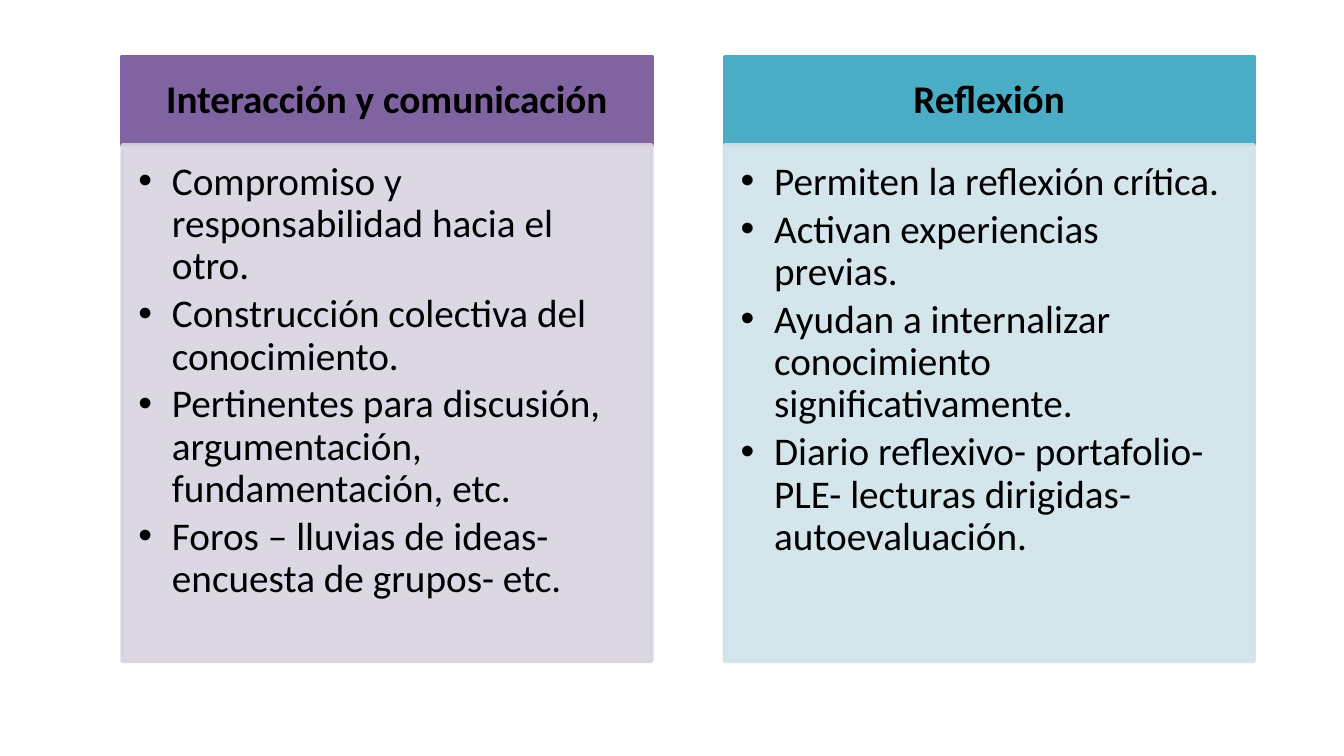
"""Build a slide with two columns of traits, each with a header and a bulleted panel."""
from lxml.etree import SubElement
from pptx import Presentation
from pptx.dml.color import RGBColor
from pptx.enum.shapes import MSO_SHAPE
from pptx.enum.text import MSO_ANCHOR, PP_ALIGN
from pptx.oxml.ns import qn
from pptx.util import Inches, Pt

BLACK = RGBColor(0x00, 0x00, 0x00)
PURPLE = RGBColor(0x80, 0x64, 0xA2)
LILAC = RGBColor(0xD8, 0xD3, 0xE0)
TEAL = RGBColor(0x4B, 0xAC, 0xC6)
PALE_BLUE = RGBColor(0xD0, 0xE3, 0xEA)

LEFT, TOP, WIDTH, COLUMN_STEP = 0.91, 0.42, 3.94, 4.48
HEADER_HEIGHT, PANEL_HEIGHT = 0.66, 3.84

HEADER_FRAME = {
    "margin_left": Inches(0.16), "margin_top": Inches(0.09),
    "margin_right": Inches(0.16), "margin_bottom": Inches(0.09),
    "vertical_anchor": MSO_ANCHOR.MIDDLE, "word_wrap": True,
}
PANEL_FRAME = {
    "margin_left": Inches(0.12), "margin_top": Inches(0.12),
    "margin_right": Inches(0.2), "margin_bottom": Inches(0.18),
    "vertical_anchor": MSO_ANCHOR.TOP, "word_wrap": True,
}
HEADER_PARAGRAPH = {"alignment": PP_ALIGN.CENTER, "line_spacing": 0.9, "space_after": Pt(7)}
PANEL_PARAGRAPH = {
    "alignment": PP_ALIGN.LEFT, "level": 1, "line_spacing": 0.9, "space_after": Pt(3),
}
FONT = {"name": "Calibri", "size": Pt(21)}

COLUMNS = [
    ("Interacción y comunicación", PURPLE, LILAC, [
        "Compromiso y responsabilidad hacia el otro.",
        "Construcción colectiva del conocimiento.",
        "Pertinentes para discusión, argumentación, fundamentación, etc.",
        "Foros – lluvias de ideas- encuesta de grupos- etc.",
    ]),
    ("Reflexión", TEAL, PALE_BLUE, [
        "Permiten la reflexión crítica.",
        "Activan experiencias previas.",
        "Ayudan a internalizar conocimiento significativamente.",
        "Diario reflexivo- portafolio- PLE- lecturas dirigidas- autoevaluación.",
    ]),
]


def set_attributes(target, values):
    for name, value in values.items():
        setattr(target, name, value)


def add_box(left, top, height, color, lines, frame_format, paragraph_format, bold):
    shape = slide.shapes.add_shape(
        MSO_SHAPE.RECTANGLE, Inches(left), Inches(top), Inches(WIDTH), Inches(height))
    shape.shadow.inherit = False
    shape.fill.solid()
    shape.fill.fore_color.rgb = color
    shape.line.color.rgb = color
    shape.line.width = Pt(2)
    set_attributes(shape.text_frame, frame_format)
    shape.text_frame.text = "\n".join(lines)
    for paragraph in shape.text_frame.paragraphs:
        set_attributes(paragraph, paragraph_format)
        set_attributes(paragraph.runs[0].font, {**FONT, "bold": bold})
        paragraph.runs[0].font.color.rgb = BLACK
    return shape


presentation = Presentation()
presentation.slide_width = Inches(10)
presentation.slide_height = Inches(10 * 9 / 16)
slide = presentation.slides.add_slide(presentation.slide_layouts[6])

for index, (title, header_color, panel_color, bullets) in enumerate(COLUMNS):
    left = LEFT + index * COLUMN_STEP
    add_box(left, TOP, HEADER_HEIGHT, header_color, [title],
            HEADER_FRAME, HEADER_PARAGRAPH, True)
    panel = add_box(left, TOP + HEADER_HEIGHT, PANEL_HEIGHT, panel_color, bullets,
                    PANEL_FRAME, PANEL_PARAGRAPH, False)
    for color in panel._element.spPr.iter(qn("a:srgbClr")):
        SubElement(color, qn("a:alpha"), val="90000")
    for paragraph in panel.text_frame.paragraphs:
        properties = paragraph._p.get_or_add_pPr()
        properties.set("marL", str(Inches(0.25)))
        properties.set("indent", str(Inches(-0.25)))
        SubElement(properties, qn("a:buFont"), typeface="Arial")
        SubElement(properties, qn("a:buChar"), char="•")

presentation.save("out.pptx")
